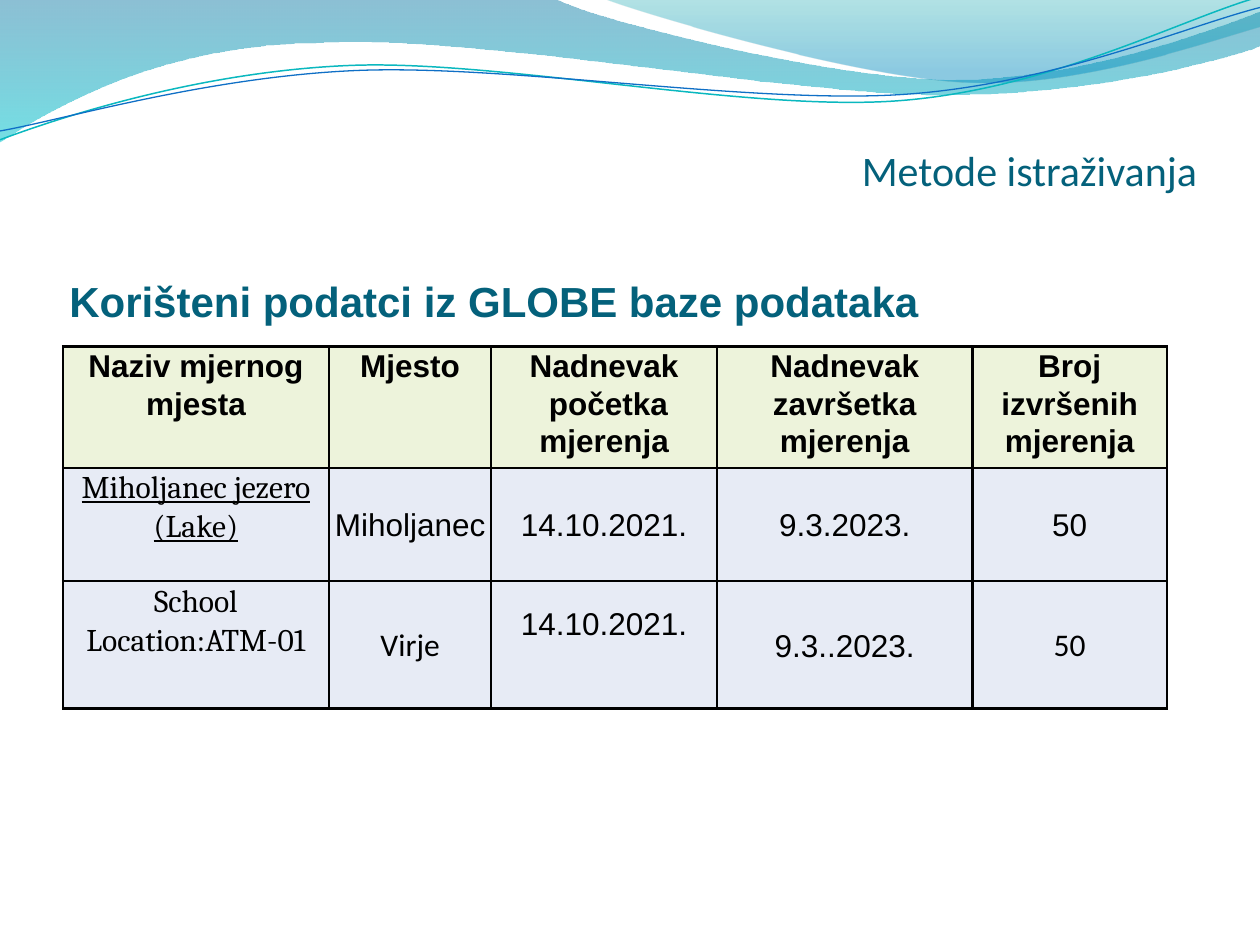
import dataclasses
import math

import lxml.etree
import pptx
import pptx.dml.color
import pptx.enum.text
import pptx.oxml
import pptx.oxml.ns
import pptx.util

COLS, ROWS = 10, 7.5  # the slide grid, one inch a unit
ALIGN = pptx.enum.text.PP_ALIGN
ANCHOR = pptx.enum.text.MSO_ANCHOR
qn = pptx.oxml.ns.qn


@dataclasses.dataclass(frozen=True)
class Theme:
    title: str = "04617B"
    ink: str = "000000"
    head: str = "EDF3DB"
    body: str = "E7EBF5"
    teal: str = "0AB8BF"
    blue: str = "0F6FC6"
    big: int = 24
    small: int = 18
    sans: str = "Arial"
    light: str = "Calibri"
    serif: str = "Cambria"


THEME = Theme()

# Each wave: start point, then pieces of one point (line) or three (curve).
BAND = [(0, -.01), [(4.4, -.01)],
        [(4.76, .17), (6.64, .63), (7.58, .63)],
        [(8.53, .63), (9.58, .26), (10, .09)], [(10.01, .36)],
        [(9.83, .44), (8.7, .76), (7.46, .75)],
        [(6.22, .75), (3.82, .28), (2.57, .34)],
        [(1.29, .35), (.46, .83), (-.01, 1.13)]]
CREST = [(4.79, -.01), [(5.09, .11), (6.82, .62), (7.69, .65)],
         [(8.56, .69), (9.61, .32), (10, .21)], [(10, 0)]]
TEAL = [(0, 1.11), [(.48, .93), (1.58, .57), (2.77, .52)],
        [(3.95, .47), (5.93, .89), (7.13, .8)],
        [(8.33, .71), (9.38, .15), (9.98, -.02)]]
BLUE = [(0, 1.04), [(.47, .96), (1.64, .61), (2.83, .56)],
        [(4.03, .51), (5.97, .83), (7.17, .75)],
        [(8.36, .67), (9.41, .21), (10, .06)]]
TILT = -2.7  # degrees, for the two thin lines

HEADS = ["Naziv mjernog mjesta", "Mjesto", "Nadnevak\n početka mjerenja",
         "Nadnevak\nzavršetka mjerenja", "Broj izvršenih mjerenja"]
SITES = [["Miholjanec jezero (Lake)", "Miholjanec", "14.10.2021.",
          "9.3.2023.", "50"],
         ["School Location:ATM-01", "Virje", "14.10.2021.",
          "9.3..2023.", "50"]]
WIDTHS = [2.11, 1.29, 1.79, 2.03, 1.54]
HEIGHTS = [.48, .9, 1.01]  # the first row grows with its text


def unit(num):
    return pptx.util.Inches(num)


def rgb(code):
    return pptx.dml.color.RGBColor.from_string(code)


def write(frame, text, font=THEME.sans, size=THEME.small, color=THEME.ink,
          bold=False, under=None, align=ALIGN.LEFT, space=None):
    for num, line in enumerate(text.split("\n")):
        para = frame.paragraphs[0] if num == 0 else frame.add_paragraph()
        para.alignment = align
        para.line_spacing = space
        run = para.add_run()
        run.text = line
        run.font.name = font
        run.font.size = pptx.util.Pt(size)
        run.font.bold = bold
        run.font.underline = under
        run.font.color.rgb = rgb(color)


def inset(part, sides):
    """Set the left, top, right and bottom margins of a frame or cell."""
    (part.margin_left, part.margin_top,
     part.margin_right, part.margin_bottom) = map(unit, sides)


def turn(point, mid, angle):
    x, y = point[0] - mid[0], point[1] - mid[1]
    cos, sin = math.cos(angle), math.sin(angle)
    return mid[0] + x * cos - y * sin, mid[1] + x * sin + y * cos


def bend(shape, wave):
    """Join each three line pieces of a curve into one Bézier piece."""
    track = next(shape._element.iter(qn("a:path")))
    lines = iter(track.findall(qn("a:lnTo")))
    for piece in wave[1:]:
        group = [next(lines) for _ in piece]
        if len(group) == 3:
            curve = lxml.etree.Element(qn("a:cubicBezTo"))
            group[0].addprevious(curve)
            for line in group:
                curve.append(line[0])
                track.remove(line)


def draw(slide, box, wave, close, tilt=0):
    left, top = box[:2]
    flat = [wave[0], *(point for piece in wave[1:] for point in piece)]
    mid = [(flat[0][axis] + flat[-1][axis]) / 2 for axis in (0, 1)]
    points = [turn(point, mid, math.radians(-tilt)) for point in flat]
    points = [(unit(left + x), unit(top + y)) for x, y in points]
    pen = slide.shapes.build_freeform(*points[0])
    pen.add_line_segments(points[1:], close=close)
    shape = pen.convert_to_shape()
    bend(shape, wave)
    shape.shadow.inherit = False
    if tilt:
        core = (shape.left + shape.width / 2, shape.top + shape.height / 2)
        hub = (unit(left + mid[0]), unit(top + mid[1]))
        spot = turn(core, hub, math.radians(tilt))
        shape.left += int(spot[0] - core[0])
        shape.top += int(spot[1] - core[1])
        shape.rotation = tilt
    return shape


def shade(shape, stops):
    """Fill from top to bottom with stops of (place, colour, opacity %)."""
    shape.line.fill.background()
    shape.fill.gradient()
    shape.fill.gradient_angle = 270
    for stop, (place, color, solid) in zip(shape.fill.gradient_stops, stops):
        stop.position = place
        stop.color.rgb = rgb(color)
    tags = shape._element.spPr.iter(qn("a:srgbClr"))
    for tag, (place, color, solid) in zip(tags, stops):
        lxml.etree.SubElement(tag, qn("a:alpha"), val=str(solid * 1000))


def waves(slide, box):
    for wave, stops in (
            (BAND, [(0, "0074A1", 45), (1, "00C6CF", 55)]),
            (CREST, [(0, "00A1A9", 30), (.8, "008BBF", 45)])):
        shade(draw(slide, box, wave, True), stops)
    for wave, color, width in ((TEAL, THEME.teal, .85),
                               (BLUE, THEME.blue, .75)):
        shape = draw(slide, box, wave, False, TILT)
        shape.fill.background()
        shape.line.color.rgb = rgb(color)
        shape.line.width = pptx.util.Pt(width)


def label(slide, box, text, anchor, sides, **form):
    frame = slide.shapes.add_textbox(*map(unit, box)).text_frame
    frame.word_wrap = True
    frame.vertical_anchor = anchor
    inset(frame, sides)
    write(frame, text, size=THEME.big, color=THEME.title, **form)


def border(cell, width=1.5):
    props = cell._tc.get_or_add_tcPr()
    for num, side in enumerate("LRTB"):
        props.insert(num, pptx.oxml.parse_xml(
            f'<a:ln{side} {pptx.oxml.ns.nsdecls("a")} '
            f'w="{pptx.util.Pt(width)}"><a:solidFill>'
            f'<a:srgbClr val="{THEME.ink}"/></a:solidFill></a:ln{side}>'))


def style(row, col):
    """Give the text format of one table cell."""
    form = dict(align=ALIGN.CENTER, space=1.07, bold=row == 0)
    if row and col == 0:
        form |= dict(font=THEME.serif, under=row == 1)
    elif row == 2 and col in (1, 4):
        form["font"] = THEME.light
    return form


def grid(slide, box):
    data = [HEADS, *SITES]
    frame = slide.shapes.add_table(len(data), len(HEADS), *map(unit, box))
    table = frame.table
    table.first_row = table.horz_banding = False
    for col, width in zip(table.columns, WIDTHS):
        col.width = unit(width)
    for row, height in zip(table.rows, HEIGHTS):
        row.height = unit(height)
    frame.width, frame.height = map(unit, box[2:])
    for row, texts in enumerate(data):
        for col, text in enumerate(texts):
            cell = table.cell(row, col)
            write(cell.text_frame, text, **style(row, col))
            cell.vertical_anchor = (ANCHOR.MIDDLE if row and col
                                    else ANCHOR.TOP)
            raised = (row, col) == (2, 2)
            inset(cell, (.04, 0, .04, .34 if raised else 0))
            cell.fill.solid()
            cell.fill.fore_color.rgb = rgb(THEME.body if row else THEME.head)
            border(cell)


def main():
    deck = pptx.Presentation()
    deck.slide_width, deck.slide_height = unit(COLS), unit(ROWS)
    slide = deck.slides.add_slide(deck.slide_layouts[6])
    waves(slide, (0, 0, COLS, 1.14))
    label(slide, (6.84, .84, 3.16, .71), "Metode istraživanja",
          ANCHOR.BOTTOM, (0, .05, 0, 0), font=THEME.light)
    label(slide, (.5, 2.03, 8.75, .72),
          "Korišteni podatci iz GLOBE baze podataka",
          ANCHOR.MIDDLE, (.05, 0, .05, 0), bold=True)
    grid(slide, (.5, 2.75, 8.75, 2.88))
    deck.save("out.pptx")


if __name__ == "__main__":
    main()
